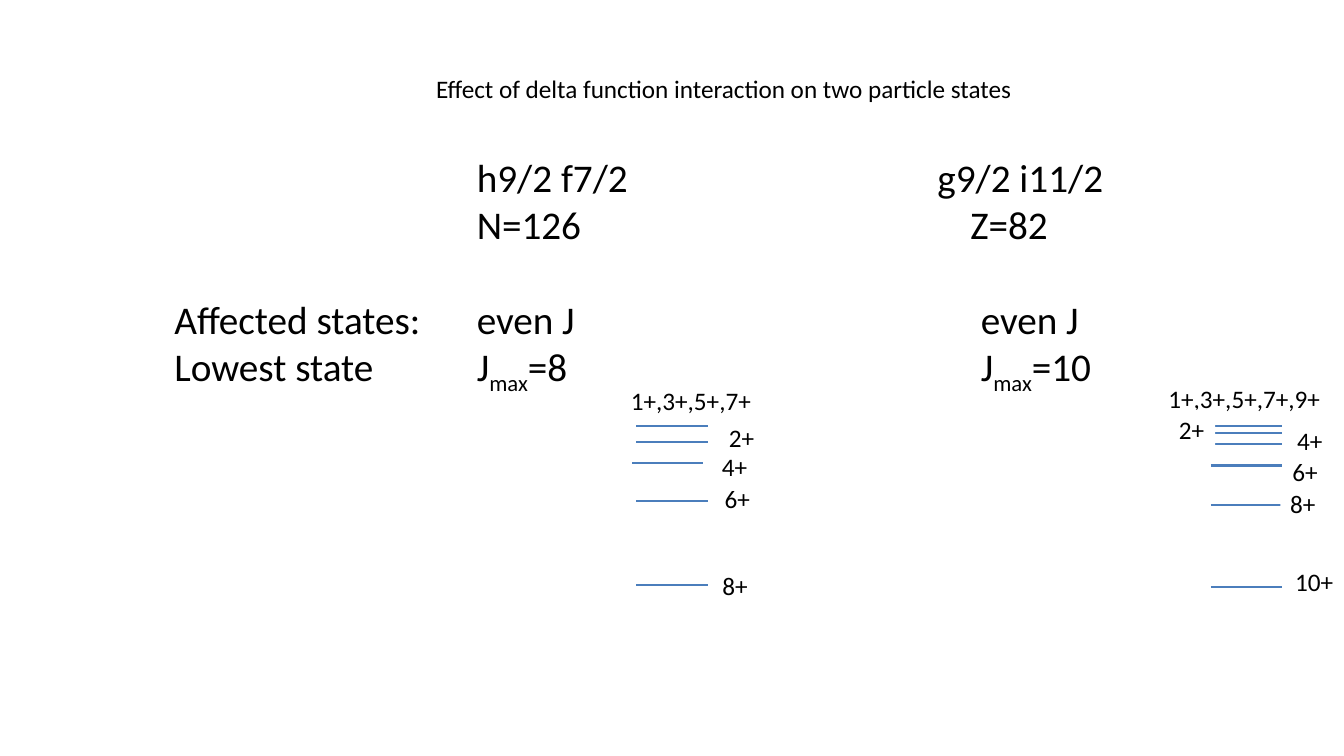
import pptx
import pptx.util
import pptx.dml.color
import pptx.enum.shapes
import pptx.enum.text
import pptx.oxml.ns
import lxml.etree

Pt = pptx.util.Pt
FONT = "Calibri"
BLACK, WHITE, BLUE = "000000", "FFFFFF", "4B7EBC"


def rgb(value):
    """Return the colour for a hex string."""
    return pptx.dml.color.RGBColor.from_string(value)


def add_box(slide, left, top, width, height, wrap=False):
    """Add a white text box and return its text frame."""
    sp = slide.shapes.add_textbox(Pt(left), Pt(top), Pt(width), Pt(height))
    sp.fill.solid()
    sp.fill.fore_color.rgb = rgb(WHITE)
    tf = sp.text_frame
    tf.word_wrap = wrap
    tf.auto_size = pptx.enum.text.MSO_AUTO_SIZE.NONE
    return tf


def add_run(p, text, size, subscript=False):
    """Add one run of text to a paragraph."""
    r = p.add_run()
    r.text = text
    r.font.name = FONT
    r.font.size = Pt(size)
    r.font.color.rgb = rgb(BLACK)
    if subscript:
        r._r.get_or_add_rPr().set("baseline", "-25000")


def add_label(slide, text, left, top, width):
    """Add a single-line 18 point label."""
    tf = add_box(slide, left, top, width, 29)
    add_run(tf.paragraphs[0], text, 18)


def set_tabs(p, stops):
    """Set the left tab stops of a paragraph."""
    qn = pptx.oxml.ns.qn
    tabs = lxml.etree.SubElement(p._p.get_or_add_pPr(), qn("a:tabLst"))
    for stop in stops:
        lxml.etree.SubElement(tabs, qn("a:tab"), pos=str(Pt(stop)), algn="l")


def add_configurations(slide, left, top, width, height):
    """Add the two configurations and their affected states in columns."""
    rows = [
        (545, 0, ["\th9/2 f7/2\tg9/2 i11/2"]),
        (568.5, 0, ["\tN=126\tZ=82"]),
        (576, 34, ["Affected states:\teven J\teven J"]),
        (576, 0, ["Lowest state\tJ", "max", "=8\tJ", "max", "=10"]),
    ]
    tf = add_box(slide, left, top, width, height, wrap=True)
    for i, (second_column, gap, runs) in enumerate(rows):
        p = tf.add_paragraph() if i else tf.paragraphs[0]
        p.space_before = Pt(gap)
        set_tabs(p, [216, second_column])
        for text in runs:
            add_run(p, text, 28, subscript=text == "max")


def add_level_scheme(slide, left, top, levels, labels):
    """Add energy levels and their labels relative to the topmost level."""
    for dx, dy in levels:
        x, y = Pt(left + dx), Pt(top + dy)
        line = slide.shapes.add_connector(
            pptx.enum.shapes.MSO_CONNECTOR.STRAIGHT, x, y, x + Pt(51), y)
        line.line.color.rgb = rgb(BLUE)
        line.line.width = Pt(1.5)
        sp_pr = line._element.spPr
        lxml.etree.SubElement(sp_pr, pptx.oxml.ns.qn("a:effectLst"))
    for text, dx, dy, width in labels:
        add_label(slide, text, left + dx, top + dy, width)


def main():
    """Build and save the slide."""
    prs = pptx.Presentation()
    prs.slide_width, prs.slide_height = Pt(960), Pt(540)
    slide = prs.slides.add_slide(prs.slide_layouts[6])
    add_label(slide, "Effect of delta function interaction on two particle states",
              304.5, 49, 430.5)
    add_configurations(slide, 117.5, 106, 687.5, 312.5)
    add_level_scheme(
        slide, 454.5, 304,
        [(0, 114), (0, 54), (-3, 27), (0, 11.5), (0, 0)],
        [("1+,3+,5+,7+", -11, -32, 101.5), ("8+", 54.5, 100, 33),
         ("6+", 56, 38, 33), ("4+", 54, 15, 33), ("2+", 59, -6, 33)])
    add_level_scheme(
        slide, 865, 304,
        [(0, 115), (0, 57), (0, 28.5), (0, 13), (0, 5.5), (0, 0)],
        [("1+,3+,5+,7+,9+", -37.5, -34, 124.5), ("10+", 53, 97, 42),
         ("8+", 49.5, 41, 33), ("6+", 51, 18.5, 33),
         ("4+", 54.5, -4, 33), ("2+", -30, -11.5, 33)])
    prs.save("out.pptx")


if __name__ == "__main__":
    main()
